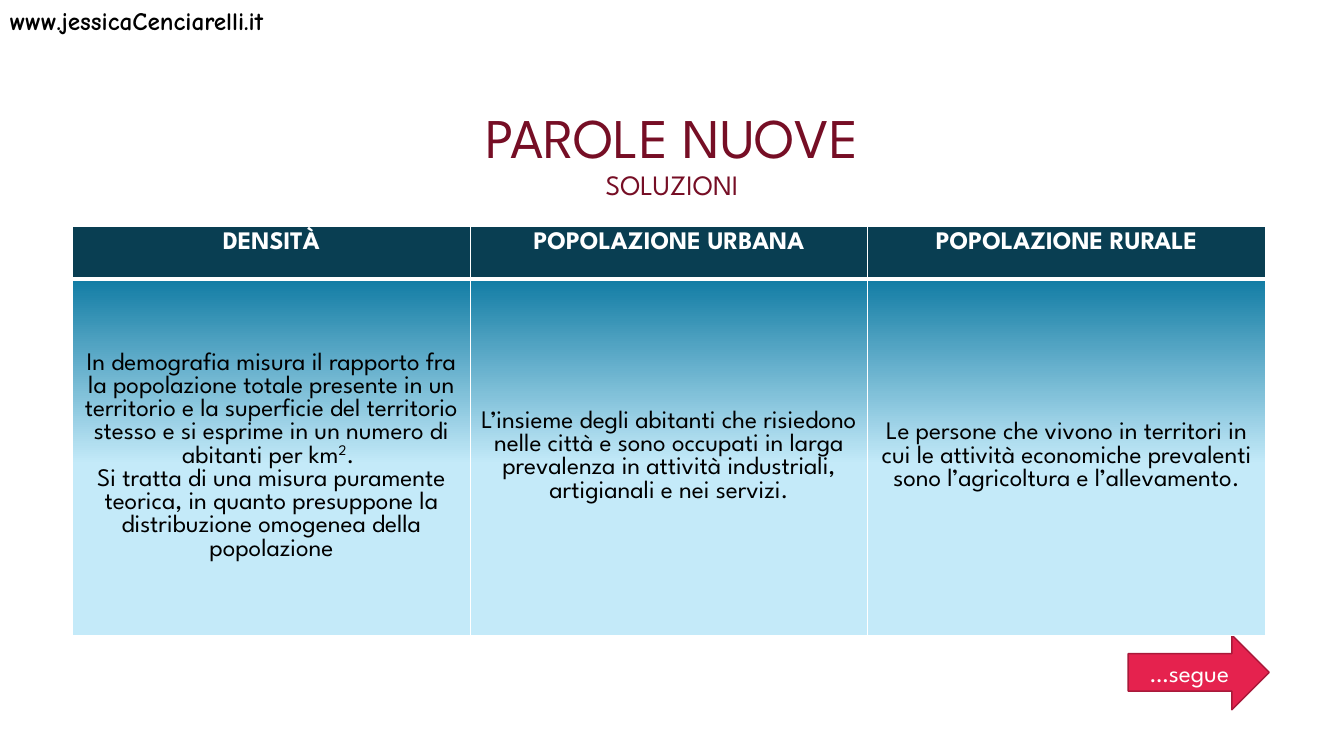
from copy import deepcopy
from dataclasses import dataclass

from lxml.etree import SubElement
from pptx import Presentation
from pptx.dml.color import RGBColor
from pptx.enum.shapes import MSO_SHAPE
from pptx.enum.text import MSO_ANCHOR, PP_ALIGN
from pptx.oxml.ns import qn
from pptx.util import Inches, Pt


@dataclass(frozen=True)
class Theme:
    heading_font: str = "League Spartan"
    site_font: str = "Comic Neue"
    title_size: int = 40
    subtitle_size: int = 20
    body_size: int = 18
    title: str = "760E25"
    white: str = "FFFFFF"
    black: str = "000000"
    header: str = "093E52"
    arrow: str = "E5224E"
    arrow_line: str = "A9193A"
    gradient: tuple = ((0, "127CA4"), (52, "C4EAF9"), (100, "C4EAF9"))
    thin: int = 1
    thick: int = 3


class GlossarySlide:
    """Places elements on a grid of 160 columns by 90 rows."""

    def __init__(self, presentation, theme):
        self.theme = theme
        self.column = presentation.slide_width / 160
        self.row = presentation.slide_height / 90
        self.slide = presentation.slides.add_slide(presentation.slide_layouts[5])

    def area(self, left, top, width, height):
        return (round(left * self.column), round(top * self.row),
                round(width * self.column), round(height * self.row))

    def format_run(self, run, size, color, bold=False, font=None):
        run.font.name = font or self.theme.heading_font
        run.font.size = Pt(size)
        run.font.bold = bold
        run.font.color.rgb = RGBColor.from_string(color)

    def title(self, heading, subtitle, *place):
        shape = self.slide.shapes.title
        shape.left, shape.top, shape.width, shape.height = self.area(*place)
        shape.text_frame.vertical_anchor = MSO_ANCHOR.MIDDLE
        paragraph = shape.text_frame.paragraphs[0]
        paragraph.text = f"{heading}\v{subtitle}"
        paragraph.alignment = PP_ALIGN.CENTER
        paragraph.line_spacing = 0.9
        sizes = (self.theme.title_size, self.theme.subtitle_size)
        for run, size in zip(paragraph.runs, sizes):
            self.format_run(run, size, self.theme.title)
        # The line break takes the size of the heading
        line_break = paragraph._p.find(qn("a:br"))
        line_break.insert(0, deepcopy(paragraph.runs[0]._r.rPr))

    def text(self, content, *place):
        frame = self.slide.shapes.add_textbox(*self.area(*place)).text_frame
        frame.word_wrap = True
        frame.text = content
        self.format_run(frame.paragraphs[0].runs[0], self.theme.body_size,
                        self.theme.black, True, self.theme.site_font)

    def arrow(self, content, *place):
        shape = self.slide.shapes.add_shape(MSO_SHAPE.RIGHT_ARROW, *self.area(*place))
        shape.shadow.inherit = False
        shape.fill.solid()
        shape.fill.fore_color.rgb = RGBColor.from_string(self.theme.arrow)
        shape.line.color.rgb = RGBColor.from_string(self.theme.arrow_line)
        shape.line.width = Pt(1)
        shape.text_frame.text = content
        shape.text_frame.vertical_anchor = MSO_ANCHOR.MIDDLE
        paragraph = shape.text_frame.paragraphs[0]
        paragraph.alignment = PP_ALIGN.CENTER
        self.format_run(paragraph.runs[0], self.theme.body_size, self.theme.white)

    def borders(self, cell, top, bottom):
        properties = cell._tc.get_or_add_tcPr()
        thin = self.theme.thin
        widths = {"lnL": thin, "lnR": thin, "lnT": top, "lnB": bottom}
        for side, width in widths.items():
            line = SubElement(properties, qn(f"a:{side}"), w=str(Pt(width)))
            fill = SubElement(line, qn("a:solidFill"))
            SubElement(fill, qn("a:srgbClr"), val=self.theme.white)

    def gradient(self, cell):
        fill = SubElement(cell._tc.get_or_add_tcPr(), qn("a:gradFill"), rotWithShape="1")
        stops = SubElement(fill, qn("a:gsLst"))
        for position, color in self.theme.gradient:
            stop = SubElement(stops, qn("a:gs"), pos=str(position * 1000))
            SubElement(stop, qn("a:srgbClr"), val=color)
        SubElement(fill, qn("a:lin"), ang="5400000", scaled="0")

    def cell_text(self, cell, paragraphs, color, bold):
        """Each paragraph is a list of pieces; every second piece is superscript."""
        frame = cell.text_frame
        for number, pieces in enumerate(paragraphs):
            paragraph = frame.add_paragraph() if number else frame.paragraphs[0]
            paragraph.alignment = PP_ALIGN.CENTER
            for index, piece in enumerate(pieces):
                run = paragraph.add_run()
                run.text = piece
                self.format_run(run, self.theme.body_size, color, bold)
                if index % 2:
                    run._r.rPr.set("baseline", "30000")

    def table(self, definitions, row_heights, left, top, width):
        theme = self.theme
        place = self.area(left, top, width, sum(row_heights))
        table = self.slide.shapes.add_table(2, len(definitions), *place).table
        for table_row, height in zip(table.rows, row_heights):
            table_row.height = round(height * self.row)
        for index, (term, meaning) in enumerate(definitions.items()):
            header, body = table.cell(0, index), table.cell(1, index)
            self.borders(header, theme.thin, theme.thick)
            header.fill.solid()
            header.fill.fore_color.rgb = RGBColor.from_string(theme.header)
            self.cell_text(header, [[term]], theme.white, True)
            self.borders(body, theme.thick, theme.thin)
            self.gradient(body)
            body.vertical_anchor = MSO_ANCHOR.MIDDLE
            self.cell_text(body, meaning, theme.black, False)


DEFINITIONS = {
    "DENSITÀ": [
        ["In demografia misura il rapporto fra la popolazione totale presente in un "
         "territorio e la superficie del territorio stesso e si esprime in un numero "
         "di abitanti per km", "2", ". "],
        ["Si tratta di una misura puramente teorica, in quanto presuppone la "
         "distribuzione omogenea della popolazione"],
    ],
    "POPOLAZIONE URBANA": [
        ["L’insieme degli abitanti che risiedono nelle città e sono occupati in larga "
         "prevalenza in attività industriali, artigianali e nei servizi."],
    ],
    "POPOLAZIONE RURALE": [
        ["Le persone che vivono in territori in cui le attività economiche prevalenti "
         "sono l’agricoltura e l’allevamento."],
    ],
}


def main():
    presentation = Presentation()
    presentation.slide_width = Inches(13.33)
    presentation.slide_height = Inches(7.5)
    glossary = GlossarySlide(presentation, Theme())

    # Heading
    glossary.title("PAROLE NUOVE", "SOLUZIONI", 9, 10.08, 142, 16.92)

    # Link to the next slide and site address
    glossary.arrow("…segue", 134.3, 75.6, 16.8, 8.9)
    glossary.text("www.jessicaCenciarelli.it", 0, 0, 41, 4.8)

    # Terms and definitions
    glossary.table(DEFINITIONS, (6.2, 42.45), 8.65, 27, 142)

    presentation.save("out.pptx")


if __name__ == "__main__":
    main()
